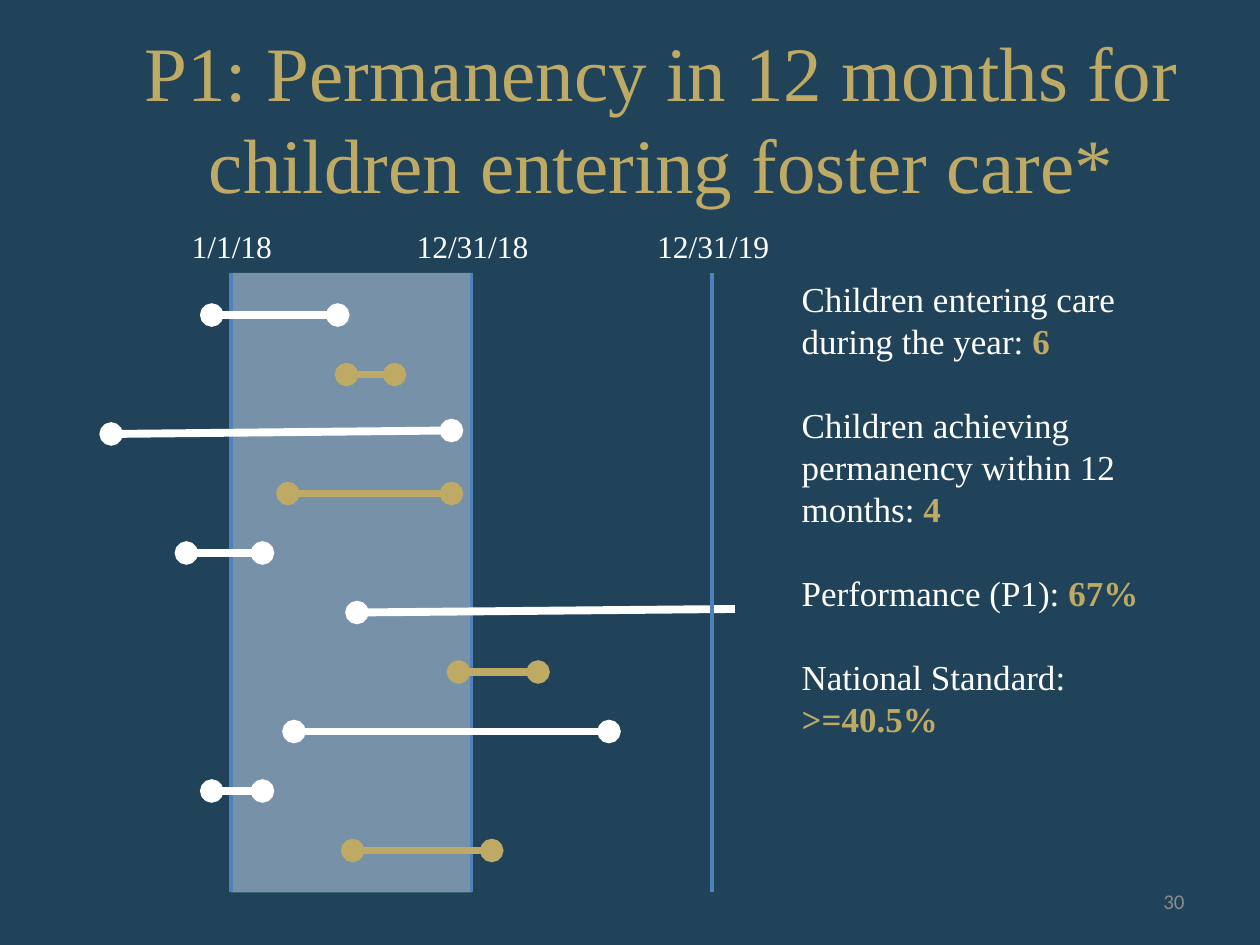
import pptx
import pptx.util
import pptx.dml.color
import pptx.enum.shapes
import pptx.enum.text
import pptx.oxml
import pptx.oxml.ns
from dataclasses import dataclass
from lxml import etree

Pt = pptx.util.Pt
ALIGN = pptx.enum.text.PP_ALIGN
ANCHOR = pptx.enum.text.MSO_ANCHOR


@dataclass(frozen=True)
class Theme:
    background: str = "204359"
    gold: str = "BEAA64"
    white: str = "FFFFFF"
    band: str = "B9CDE5"
    marker: str = "4F81BD"
    grey: str = "8C8C8C"
    serif: str = "Times New Roman"
    sans: str = "Calibri"
    title_size: int = 44
    body_size: int = 20
    label_size: int = 18
    number_size: int = 12


THEME = Theme()

TITLE = "P1: Permanency in 12 months for children entering foster care*"
PAGE_NUMBER = "30"
DATES = [("1/1/18", 61), ("12/31/18", 79), ("12/31/19", 79)]  # label, label width
SUMMARY = [
    ("Children entering care during the year: ", "6"),
    ("Children achieving permanency within 12 months: ", "4"),
    ("Performance (P1): ", "67%"),
    ("National Standard: ", ">=40.5%"),
]
# start x, end x, rise, colour, whether the stay has ended
STAYS = [
    (121, 193, 0, THEME.white, True),
    (198, 225.5, 0, THEME.gold, True),
    (63.5, 258, 2, THEME.white, True),
    (164.5, 258, 0, THEME.gold, True),
    (106.5, 150, 0, THEME.white, True),
    (204, 420, 2, THEME.white, False),
    (262, 307.5, 0, THEME.gold, True),
    (168, 348, 0, THEME.white, True),
    (121, 150, 0, THEME.white, True),
    (201.5, 281, 0, THEME.gold, True),
]

YEAR_LEFT, YEAR_WIDTH = 132, 137.5
CHART_TOP, CHART_BOTTOM = 156, 510
FIRST_ROW, ROW_STEP = 180, 34


def rgb(colour):
    return pptx.dml.color.RGBColor.from_string(colour)


def add_span(para, text, size, colour, font=THEME.serif, bold=False):
    span = para.add_run()
    span.text = text
    span.font.size = Pt(size)
    span.font.name = font
    span.font.bold = bold
    span.font.color.rgb = rgb(colour)


def add_text(page, place, text, size, colour, font=THEME.serif,
             align=ALIGN.CENTER, anchor=ANCHOR.TOP, wrap=True):
    box = page.shapes.add_textbox(*map(Pt, place))
    box.text_frame.word_wrap = wrap
    box.text_frame.vertical_anchor = anchor
    para = box.text_frame.paragraphs[0]
    para.alignment = align
    add_span(para, text, size, colour, font)


def add_line(page, start, end, colour, width, ends=()):
    """Draw a line; ends names the tips (headEnd, tailEnd) that carry a dot."""
    line = page.shapes.add_connector(
        pptx.enum.shapes.MSO_CONNECTOR.STRAIGHT, *map(Pt, start + end))
    line.line.color.rgb = rgb(colour)
    line.line.width = Pt(width)
    properties = line._element.spPr
    for tip in ends:
        etree.SubElement(properties.find(pptx.oxml.ns.qn("a:ln")),
                         pptx.oxml.ns.qn("a:" + tip), type="oval")
    etree.SubElement(properties, pptx.oxml.ns.qn("a:effectLst"))


def add_title(page):
    title = page.shapes.title
    title.left, title.top, title.width, title.height = map(Pt, (0, 21.6, 720, 90))
    frame = title.text_frame
    frame.margin_left = Pt(43.2)
    frame.vertical_anchor = ANCHOR.MIDDLE
    frame.paragraphs[0].alignment = ALIGN.CENTER
    add_span(frame.paragraphs[0], TITLE, THEME.title_size, THEME.gold)


def add_year_band(page):
    band = page.shapes.add_shape(
        pptx.enum.shapes.MSO_SHAPE.RECTANGLE, Pt(YEAR_LEFT), Pt(CHART_TOP),
        Pt(YEAR_WIDTH), Pt(CHART_BOTTOM - CHART_TOP))
    band.shadow.inherit = False
    band.line.fill.background()
    band.fill.solid()
    band.fill.fore_color.rgb = rgb(THEME.band)
    colour = band._element.spPr.find(".//" + pptx.oxml.ns.qn("a:srgbClr"))
    etree.SubElement(colour, pptx.oxml.ns.qn("a:alpha"), val="57000")


def add_date(page, index):
    label, width = DATES[index]
    x = YEAR_LEFT + index * YEAR_WIDTH
    add_line(page, (x, CHART_TOP), (x, CHART_BOTTOM), THEME.marker, 2)
    add_text(page, (x + 0.5 - width / 2, 126, width, 29), label,
             THEME.label_size, THEME.white, wrap=False)


def add_stays(page):
    for row, (start, end, rise, colour, ended) in enumerate(STAYS):
        y = FIRST_ROW + row * ROW_STEP
        ends = ("headEnd", "tailEnd") if ended else ("headEnd",)
        add_line(page, (start, y), (end, y - rise), colour, 4.5, ends)


def add_summary(page):
    frame = page.shapes.add_textbox(*map(Pt, (451, 155, 209, 274))).text_frame
    frame.word_wrap = True
    for index, (caption, value) in enumerate(SUMMARY):
        para = frame.add_paragraph() if index else frame.paragraphs[0]
        para.space_before = Pt(24 if index else 0)
        add_span(para, caption, THEME.body_size, THEME.white)
        add_span(para, value, THEME.body_size, THEME.gold, bold=True)


def main():
    deck = pptx.Presentation()
    deck.slide_width, deck.slide_height = Pt(720), Pt(540)
    page = deck.slides.add_slide(deck.slide_layouts.get_by_name("Title Only"))
    page.background.fill.solid()
    page.background.fill.fore_color.rgb = rgb(THEME.background)

    add_title(page)
    add_year_band(page)
    add_date(page, 0)
    add_date(page, 1)
    add_stays(page)
    add_date(page, 2)
    add_summary(page)
    add_text(page, (516, 500.5, 168, 28.8), PAGE_NUMBER, THEME.number_size,
             THEME.grey, font=THEME.sans, align=ALIGN.RIGHT, anchor=ANCHOR.MIDDLE)
    deck.save("out.pptx")


if __name__ == "__main__":
    main()
